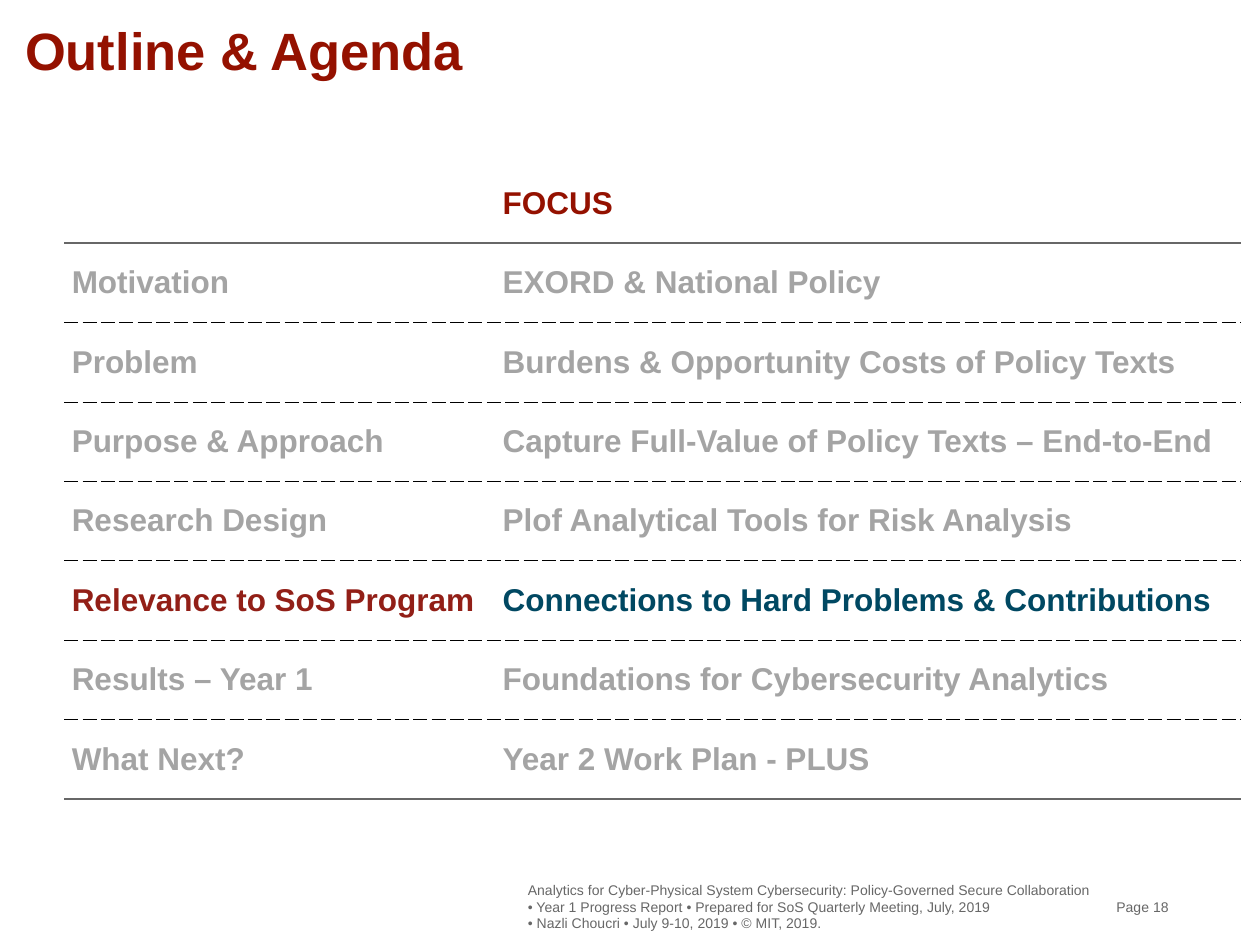
from dataclasses import dataclass

from lxml.etree import SubElement
from pptx import Presentation
from pptx.dml.color import RGBColor
from pptx.enum.text import MSO_ANCHOR, MSO_AUTO_SIZE, PP_ALIGN
from pptx.oxml.ns import qn
from pptx.util import Inches, Pt


@dataclass(frozen=True)
class Theme:
    """Fonts, colours, type sizes and rules of the slide."""
    font: str = "Arial"
    heading: str = "941100"
    muted: str = "A4A4A4"
    topic: str = "921F17"
    focus: str = "004862"
    footer: str = "676767"
    title_size: int = 30
    agenda_size: int = 18
    footer_size: int = 8
    solid_rule: tuple = ("676767", 1, "solid")
    dashed_rule: tuple = ("000000", 0.25, "dash")
    plain_table: str = "{2D5ABB26-0587-4C30-8999-92F81FD0307C}"


THEME = Theme()
CURRENT_ROW = 5
AGENDA = [
    ("", "FOCUS"),
    ("Motivation", "EXORD & National Policy"),
    ("Problem", "Burdens & Opportunity Costs of Policy Texts"),
    ("Purpose & Approach", "Capture Full-Value of Policy Texts – End-to-End"),
    ("Research Design", "Plof Analytical Tools for Risk Analysis"),
    ("Relevance to SoS Program", "Connections to Hard Problems & Contributions"),
    ("Results – Year 1", "Foundations for Cybersecurity Analytics"),
    ("What Next?", "Year 2 Work Plan - PLUS"),
]
CREDITS = [
    "Analytics for Cyber-Physical System Cybersecurity: Policy-Governed Secure Collaboration",
    "• Year 1 Progress Report • Prepared for SoS Quarterly Meeting, July, 2019",
    "• Nazli Choucri • July 9-10, 2019 • © MIT, 2019.",
]


def write(paragraph, text, size, color, bold=False):
    """Add one formatted, left-aligned run to a paragraph."""
    paragraph.alignment = PP_ALIGN.LEFT
    run = paragraph.add_run()
    run.text = text
    run.font.name = THEME.font
    run.font.size = Pt(size)
    run.font.bold = bold
    run.font.color.rgb = RGBColor.from_string(color)


def set_insets(box, left, top, right, bottom):
    """Set the inner margins of a text frame or cell in inches."""
    box.margin_left, box.margin_top = Inches(left), Inches(top)
    box.margin_right, box.margin_bottom = Inches(right), Inches(bottom)


def add_title(slide, text):
    """Place and fill the title placeholder."""
    title = slide.shapes.title
    title.left, title.top = Inches(0.2), Inches(0.11)
    title.width, title.height = Inches(9.6), Inches(0.53)
    frame = title.text_frame
    frame.auto_size = MSO_AUTO_SIZE.NONE
    frame.vertical_anchor = MSO_ANCHOR.BOTTOM
    set_insets(frame, 0, 0, 0, 0)
    write(frame.paragraphs[0], text, THEME.title_size, THEME.heading, True)


def add_footer(slide, left, width, lines):
    """Add a small text box in the footer band."""
    box = slide.shapes.add_textbox(Inches(left), Inches(6.96), Inches(width), Inches(0.47))
    frame = box.text_frame
    frame.word_wrap = True
    frame.vertical_anchor = MSO_ANCHOR.MIDDLE
    set_insets(frame, 0.08, 0.04, 0.08, 0.04)
    for index, line in enumerate(lines):
        paragraph = frame.add_paragraph() if index else frame.paragraphs[0]
        write(paragraph, line, THEME.footer_size, THEME.footer)


def add_rule(cell, side, rule):
    """Draw one horizontal border of a cell."""
    color, width, dash = rule
    line = SubElement(cell._tc.get_or_add_tcPr(), qn(f"a:{side}"), w=str(Pt(width)))
    fill = SubElement(line, qn("a:solidFill"))
    SubElement(fill, qn("a:srgbClr"), val=color)
    SubElement(line, qn("a:prstDash"), val=dash)


def agenda_color(row, column):
    """Choose the text colour for a place in the agenda."""
    if row == 0:
        return THEME.heading
    if row == CURRENT_ROW:
        return (THEME.topic, THEME.focus)[column]
    return THEME.muted


def add_agenda(slide, agenda):
    """Add the agenda table with its ruled rows."""
    widths, row_height, last = (3.42, 5.92), 0.63, len(agenda) - 1
    table = slide.shapes.add_table(
        len(agenda), len(widths), Inches(0.51), Inches(1.3),
        Inches(sum(widths)), Inches(row_height * len(agenda))).table
    table.first_row = table.horz_banding = False
    table._tbl.tblPr.find(qn("a:tableStyleId")).text = THEME.plain_table
    for column, width in zip(table.columns, widths):
        column.width = Inches(width)
    for row, entries in enumerate(agenda):
        table.rows[row].height = Inches(row_height)
        for column, text in enumerate(entries):
            cell = table.cell(row, column)
            if row:
                add_rule(cell, "lnT", THEME.solid_rule if row == 1 else THEME.dashed_rule)
            add_rule(cell, "lnB", THEME.solid_rule if row in (0, last) else THEME.dashed_rule)
            cell.fill.background()
            cell.vertical_anchor = MSO_ANCHOR.MIDDLE
            set_insets(cell, 0.06, 0, 0.07, 0)
            if text:
                write(cell.text_frame.paragraphs[0], text, THEME.agenda_size,
                      agenda_color(row, column), True)


def main():
    """Build and save the agenda slide."""
    deck = Presentation()
    deck.slide_width, deck.slide_height = Inches(10), Inches(7.5)
    slide = deck.slides.add_slide(deck.slide_layouts.get_by_name("Title Only"))
    add_footer(slide, 8.78, 0.68, ["Page 18"])
    add_footer(slide, 4.11, 4.63, CREDITS)
    add_title(slide, "Outline & Agenda")
    add_agenda(slide, AGENDA)
    deck.save("out.pptx")


if __name__ == "__main__":
    main()
